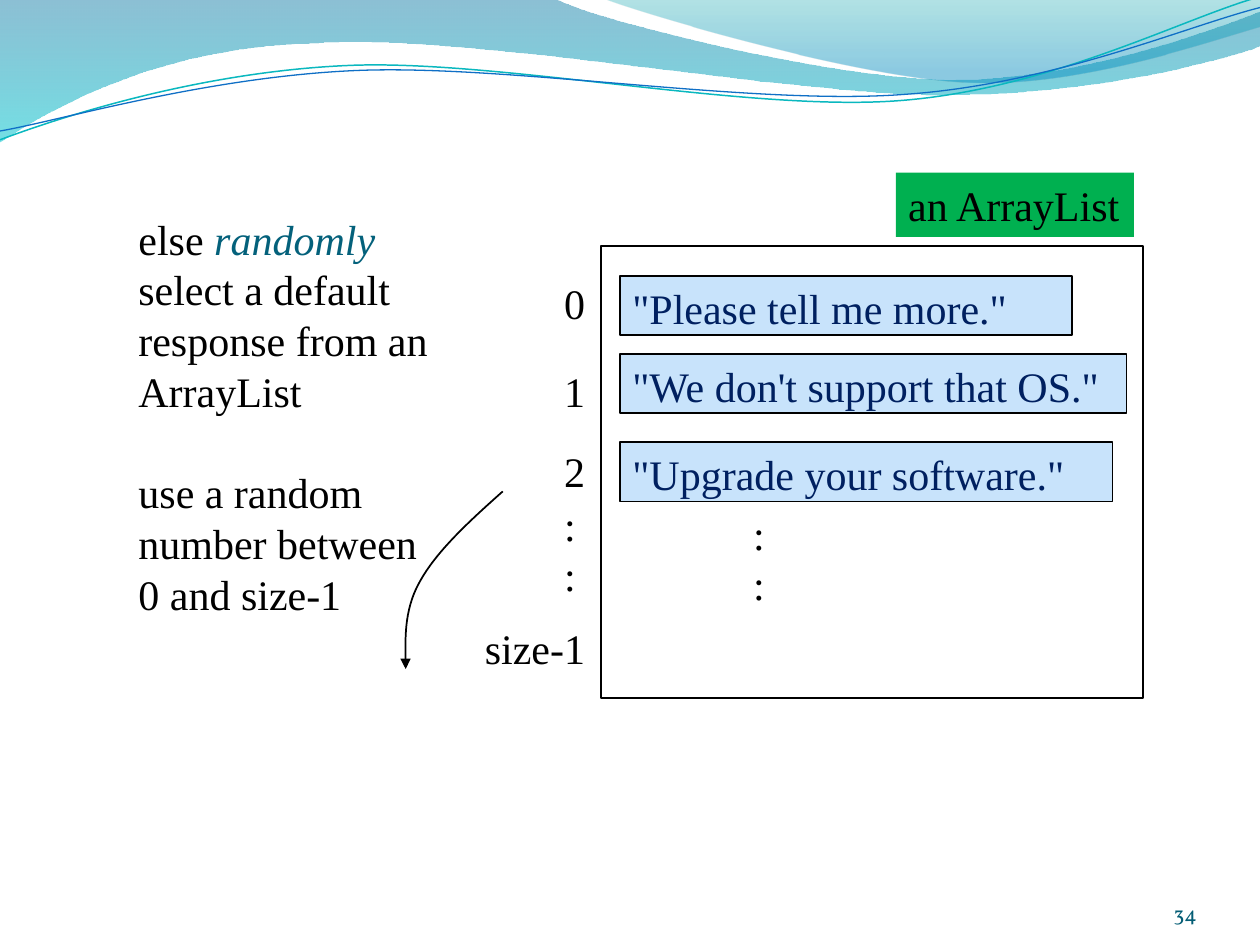
import pptx
import pptx.util
import pptx.dml.color
import pptx.enum.shapes
import pptx.enum.text
import pptx.oxml
import pptx.oxml.ns
from lxml import etree

Inches = pptx.util.Inches
Pt = pptx.util.Pt
qn = pptx.oxml.ns.qn
PP_ALIGN = pptx.enum.text.PP_ALIGN
MSO_ANCHOR = pptx.enum.text.MSO_ANCHOR
MSO_AUTO_SIZE = pptx.enum.text.MSO_AUTO_SIZE

BODY = {"name": "Times New Roman", "size": Pt(24)}
BLACK = "000000"
NAVY = "002060"
LINE_PITCH = Pt(29)


def rgb(value):
    return pptx.dml.color.RGBColor.from_string(value)


def set_attrs(obj, values):
    for name, value in values.items():
        setattr(obj, name, value)


def add_run(p, text, color, fmt=BODY):
    r = p.add_run()
    r.text = text
    set_attrs(r.font, fmt)
    r.font.color.rgb = rgb(color)


def write_lines(tf, lines, color=BLACK):
    set_attrs(tf, {"word_wrap": False, "vertical_anchor": MSO_ANCHOR.TOP})
    for i, line in enumerate(lines):
        p = tf.paragraphs[0] if i == 0 else tf.add_paragraph()
        set_attrs(p, {"alignment": PP_ALIGN.LEFT, "line_spacing": LINE_PITCH})
        add_run(p, line, color)


def add_label(slide, box, lines):
    sp = slide.shapes.add_textbox(*map(Inches, box))
    write_lines(sp.text_frame, lines)
    sp.text_frame.auto_size = MSO_AUTO_SIZE.SHAPE_TO_FIT_TEXT
    return sp.text_frame


def set_line(sp, color, width):
    if color is None:
        sp.line.fill.background()
    else:
        sp.line.color.rgb = rgb(color)
        sp.line.width = Pt(width)


def add_rect(slide, box, fill=None, line=None, text=None, color=BLACK):
    rect = pptx.enum.shapes.MSO_SHAPE.RECTANGLE
    sp = slide.shapes.add_shape(rect, *map(Inches, box))
    sp.shadow.inherit = False
    if fill is None:
        sp.fill.background()
    else:
        sp.fill.solid()
        sp.fill.fore_color.rgb = rgb(fill)
    set_line(sp, line, 1)
    if text:
        write_lines(sp.text_frame, [text], color)


def add_curve(slide, start, segments, closed=False, line=None, width=1):
    points = [tuple(map(Inches, pt)) for seg in segments for pt in seg]
    builder = slide.shapes.build_freeform(*map(Inches, start))
    builder.add_line_segments(points, close=closed)
    sp = builder.convert_to_shape()
    sp.shadow.inherit = False
    sides = iter(list(sp._element.iter(qn("a:lnTo"))))
    for seg in segments:
        steps = [next(sides) for _ in seg]
        if len(seg) == 3:
            bezier = etree.Element(qn("a:cubicBezTo"))
            steps[0].addprevious(bezier)
            for step in steps:
                bezier.append(step[0])
                step.getparent().remove(step)
    sp.fill.background()
    set_line(sp, line, width)
    return sp


def fill_gradient(sp, stops):
    sp.fill.gradient()
    sp.fill.gradient_angle = 270
    for stop, (position, color, opacity) in zip(sp.fill.gradient_stops, stops):
        stop.position = position
        stop.color.rgb = rgb(color)
    colors = sp._element.spPr.iter(qn("a:srgbClr"))
    for clr, (position, color, opacity) in zip(colors, stops):
        etree.SubElement(clr, qn("a:alpha"), val=str(opacity * 1000))


def add_waves(slide):
    left_band = add_curve(slide, (0, 0), [
        [(4.4, -0.01)],
        [(4.76, 0.17), (6.64, 0.63), (7.58, 0.63)],
        [(8.53, 0.63), (9.58, 0.26), (10, 0.09)],
        [(10.01, 0.36)],
        [(9.83, 0.44), (8.7, 0.76), (7.46, 0.75)],
        [(6.22, 0.75), (3.82, 0.28), (2.57, 0.34)],
        [(1.29, 0.36), (0.46, 0.83), (-0.01, 1.13)],
    ], closed=True)
    fill_gradient(left_band, [(0, "0074A1", 45), (1, "00C6CF", 55)])
    right_band = add_curve(slide, (4.79, -0.01), [
        [(5.09, 0.11), (6.82, 0.62), (7.69, 0.65)],
        [(8.56, 0.69), (9.61, 0.32), (10, 0.21)],
        [(10, 0)],
    ], closed=True)
    fill_gradient(right_band, [(0, "00A1A9", 30), (0.8, "008BBF", 45)])
    add_curve(slide, (0, 1.11), [
        [(0.48, 0.93), (1.58, 0.57), (2.77, 0.52)],
        [(3.95, 0.47), (5.93, 0.89), (7.13, 0.8)],
        [(8.33, 0.71), (9.38, 0.15), (9.98, -0.02)],
    ], line="0AB8BF", width=0.85)
    add_curve(slide, (0, 1.04), [
        [(0.47, 0.96), (1.64, 0.61), (2.83, 0.56)],
        [(4.03, 0.51), (5.97, 0.84), (7.17, 0.75)],
        [(8.36, 0.67), (9.41, 0.21), (10, 0.06)],
    ], line="0F6FC6", width=0.75)


def add_array_list(slide):
    responses = [
        (2.19, 3.59, '"Please tell me more."'),
        (2.81, 4.02, '"We don\'t support that OS."'),
        (3.51, 3.91, '"Upgrade your software."'),
    ]
    for top, width, text in responses:
        add_rect(slide, (4.92, top, width, 0.47), "C8E3FB", BLACK, text, NAVY)
    add_label(slide, (5.88, 3.98, 0.3, 0.91), [":", ":"])
    add_rect(slide, (4.77, 1.95, 4.3, 3.59), line=BLACK)
    add_rect(slide, (7.11, 1.37, 1.89, 0.51), "00B050", text="an ArrayList")
    for index, top in enumerate([2.15, 2.85, 3.48]):
        add_label(slide, (4.38, top, 0.37, 0.51), [str(index)])
    add_label(slide, (4.38, 3.91, 0.3, 0.91), [":", ":"])
    add_label(slide, (3.75, 4.89, 1.01, 0.51), ["size-1"])


def add_explanation(slide):
    tf = add_label(slide, (1, 1.64, 2.52, 3.33), [
        "else ", "select a default", "response from an", "ArrayList",
        "use a random", "number between", "0 and size-1",
    ])
    add_run(tf.paragraphs[0], "randomly", "04617B", {**BODY, "italic": True})
    tf.paragraphs[4].space_before = LINE_PITCH


def add_arrow(slide):
    sp = add_curve(slide, (3.99, 3.9), [
        [(3.72, 4.14), (3.46, 4.38), (3.33, 4.62)],
        [(3.2, 4.85), (3.22, 5.31), (3.22, 5.31)],
    ], line=BLACK)
    etree.SubElement(sp.line._get_or_add_ln(), qn("a:tailEnd"), type="triangle")


def add_slide_number(slide, number):
    sp = slide.shapes.add_textbox(*map(Inches, (8.67, 6.95, 0.83, 0.4)))
    tf = sp.text_frame
    set_attrs(tf, {
        "word_wrap": True, "vertical_anchor": MSO_ANCHOR.BOTTOM,
        "margin_left": 0, "margin_right": 0,
        "margin_top": 0, "margin_bottom": 0,
    })
    p = tf.paragraphs[0]
    p.alignment = PP_ALIGN.RIGHT
    add_run(p, number, "045D75", {"name": "Vollkorn", "size": Pt(12)})


def main():
    prs = pptx.Presentation()
    set_attrs(prs, {"slide_width": Inches(10), "slide_height": Inches(7.5)})
    slide = prs.slides.add_slide(prs.slide_layouts[6])
    add_waves(slide)
    add_array_list(slide)
    add_explanation(slide)
    add_arrow(slide)
    add_slide_number(slide, "34")
    prs.save("out.pptx")


if __name__ == "__main__":
    main()
